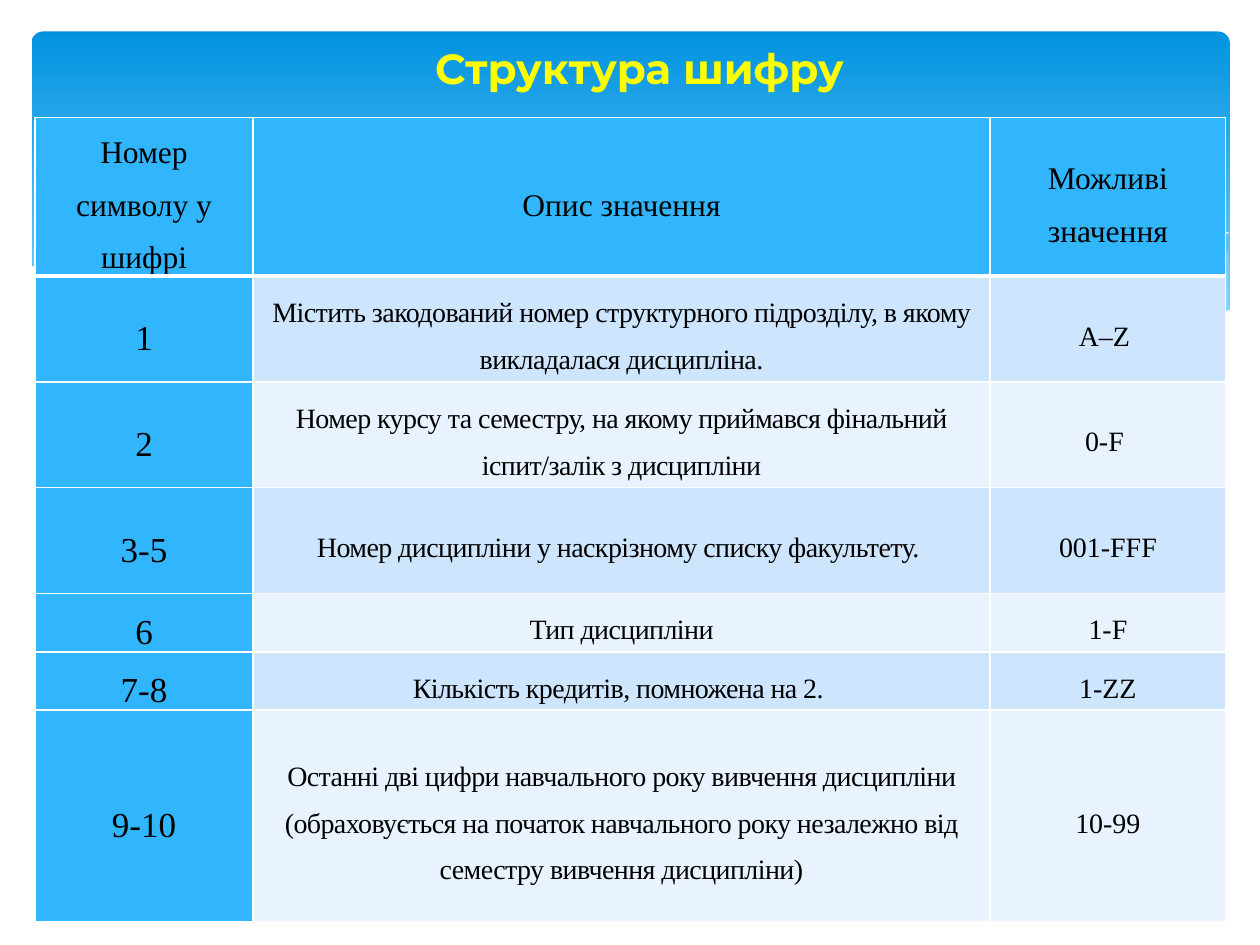
from dataclasses import dataclass

from pptx import Presentation
from pptx.dml.color import RGBColor
from pptx.enum.shapes import MSO_SHAPE
from pptx.enum.text import MSO_ANCHOR, PP_ALIGN
from pptx.oxml import parse_xml
from pptx.oxml.ns import nsdecls, qn
from pptx.util import Pt
from lxml import etree

ROUNDED = MSO_SHAPE.ROUNDED_RECTANGLE
CENTER = PP_ALIGN.CENTER
MIDDLE = MSO_ANCHOR.MIDDLE


@dataclass(frozen=True)
class Theme:
    band_top: str = "0293E0"
    band_bottom: str = "83D3FE"
    wave: str = "C6E7FC"
    white: str = "FFFFFF"
    title: str = "FFFF00"
    text: str = "000000"
    accent: str = "31B6FD"
    stripes: tuple = ("CEE5FE", "E8F3FF")
    title_font: str = "Montserrat"
    body_font: str = "Times New Roman"
    title_size: int = 24
    header_size: int = 18
    number_size: int = 20
    body_size: int = 16


THEME = Theme()

# Wave outlines, in points from the top left corner of the band
RIGHT_WAVE = [(684, 126), (634, 135), (602, 143), (524, 161), (458, 173),
              (509, 179), (560, 182), (603, 180), (645, 173), (684, 160)]
LONG_WAVE = [(625, 179), (563, 169), (490, 155), (435, 142), (382, 130),
             (317, 120), (256, 115), (188, 120), (243, 128), (305, 142),
             (390, 161), (461, 174), (521, 181), (578, 182)]
LONG_CREST = [(204, 122), (271, 117), (349, 120), (440, 132), (529, 150), (635, 178)]
RIGHT_CREST = [(423, 167), (500, 147), (584, 129), (637, 120), (684, 115)]
WHITE_WAVE = [(685, 159), (644, 173), (594, 180), (542, 181), (463, 173),
              (382, 158), (304, 140), (227, 124), (162, 116), (109, 114),
              (58, 118), (19, 127), (-1, 135), (-1, 219), (685, 219)]

COL_WIDTHS = [124.6, 421.2, 134.6]
ROW_HEIGHTS = [90.7, 60.5, 60.5, 60.5, 30.2, 30.2, 121]
HEADER = ("Номер символу у шифрі", "Опис значення", "Можливі значення")
ROWS = [
    ("1", "Містить закодований номер структурного підрозділу, в якому "
          "викладалася дисципліна.", "A–Z "),
    ("2", "Номер курсу та семестру, на якому приймався фінальний іспит/залік "
          "з дисципліни", "0-F "),
    ("3-5", "Номер дисципліни у наскрізному списку факультету. ", "001-FFF"),
    ("6", "Тип дисципліни", "1-F"),
    ("7-8", "Кількість кредитів, помножена на 2. ", "1-ZZ"),
    ("9-10", "Останні дві цифри навчального року вивчення дисципліни "
             "(обраховується на початок навчального року незалежно від "
             "семестру вивчення дисципліни)", "10-99"),
]


def rgb(value):
    return RGBColor.from_string(value)


def write(tf, text, size, font=THEME.body_font, color=THEME.text, bold=False,
          line_spacing=None, tracking=None):
    p = tf.paragraphs[0]
    p.alignment = CENTER
    if line_spacing:
        p.line_spacing = line_spacing
    r = p.add_run()
    r.text = text
    r.font.size = Pt(size)
    r.font.name = font
    r.font.bold = bold
    r.font.color.rgb = rgb(color)
    if tracking:
        r.font._element.set("spc", str(round(tracking * 100)))


def add_wave(slide, left, top, points, fill=None, opacity=None):
    """Draw a filled wave, or an open white crest when no fill is given."""
    points = [(left + x, top + y) for x, y in points]
    builder = slide.shapes.build_freeform(*points[0], scale=Pt(1))
    builder.add_line_segments(points[1:], close=fill is not None)
    sp = builder.convert_to_shape()
    sp.shadow.inherit = False
    if fill is None:
        sp.fill.background()
        sp.line.color.rgb = rgb(THEME.white)
        sp.line.width = Pt(0)
        return
    sp.line.fill.background()
    sp.fill.solid()
    sp.fill.fore_color.rgb = rgb(fill)
    if opacity:
        color = sp._element.spPr.find(qn("a:solidFill"))[0]
        etree.SubElement(color, qn("a:alpha")).set("val", str(opacity * 1000))


def add_band(slide, left, top, width, height):
    sp = slide.shapes.add_shape(ROUNDED, Pt(left), Pt(top), Pt(width), Pt(height))
    sp.adjustments[0] = 0.034
    sp.shadow.inherit = False
    sp.line.fill.background()
    sp.fill.gradient()
    sp.fill.gradient_angle = 270
    stops = zip(sp.fill.gradient_stops, (0, 0.9), (THEME.band_top, THEME.band_bottom))
    for stop, position, color in stops:
        stop.position = position
        stop.color.rgb = rgb(color)
    add_wave(slide, left, top, RIGHT_WAVE, THEME.wave, 29)
    add_wave(slide, left, top, LONG_WAVE, THEME.wave, 40)
    add_wave(slide, left, top, LONG_CREST)
    add_wave(slide, left, top, RIGHT_CREST)
    add_wave(slide, left, top, WHITE_WAVE, THEME.white)


def add_title(slide, left, top, width, height):
    tf = slide.shapes.add_textbox(Pt(left), Pt(top), Pt(width), Pt(height)).text_frame
    tf.word_wrap = True
    write(tf, "Структура шифру", THEME.title_size, font=THEME.title_font,
          color=THEME.title, bold=True)


def add_borders(cell):
    for side, width in (("L", 1), ("R", 1), ("T", 1), ("B", 3)):
        cell._tc.get_or_add_tcPr().append(parse_xml(
            f'<a:ln{side} {nsdecls("a")} w="{Pt(width)}"><a:solidFill>'
            f'<a:srgbClr val="{THEME.white}"/></a:solidFill></a:ln{side}>'))


def fill_cell(cell, text, row, col):
    cell.margin_left = cell.margin_right = Pt(3)
    cell.margin_top = cell.margin_bottom = 0
    cell.vertical_anchor = MIDDLE
    size = THEME.number_size if col == 0 else THEME.body_size
    color = THEME.accent if col == 0 else THEME.stripes[(row - 1) % 2]
    if row == 0:
        size, color = THEME.header_size, THEME.accent
        add_borders(cell)
    cell.fill.solid()
    cell.fill.fore_color.rgb = rgb(color)
    write(cell.text_frame, text, size, line_spacing=1.5,
          tracking=-0.3 if row and col == 1 else None)


def add_code_table(slide, left, top):
    frame = slide.shapes.add_table(len(ROW_HEIGHTS), len(COL_WIDTHS), Pt(left), Pt(top),
                                   Pt(sum(COL_WIDTHS)), Pt(sum(ROW_HEIGHTS)))
    table = frame.table
    for column, width in zip(table.columns, COL_WIDTHS):
        column.width = Pt(width)
    for row, height in zip(table.rows, ROW_HEIGHTS):
        row.height = Pt(height)
    for i, texts in enumerate([HEADER] + ROWS):
        for j, text in enumerate(texts):
            fill_cell(table.cell(i, j), text, i, j)


def main():
    prs = Presentation()
    prs.slide_width, prs.slide_height = Pt(720), Pt(540)
    slide = prs.slides.add_slide(prs.slide_layouts[6])
    add_band(slide, 18, 18, 684.7, 194.4)
    add_code_table(slide, 20, 67)
    add_title(slide, 206.6, 20.9, 317.5, 36)
    prs.save("out.pptx")


if __name__ == "__main__":
    main()
